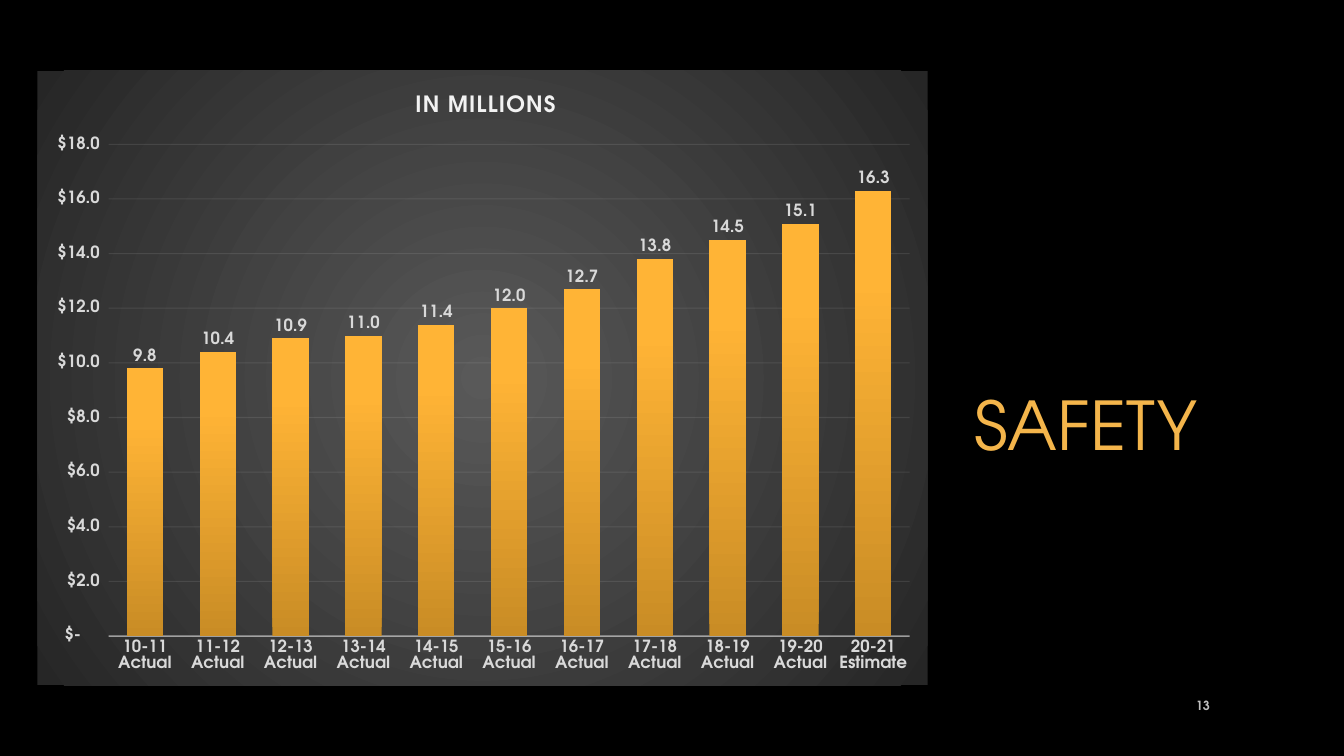
"""Build the Safety slide: a yearly column chart beside its title."""
import pptx
import pptx.chart.data
import pptx.dml.color
import pptx.enum.chart
import pptx.enum.text
import pptx.oxml
import pptx.oxml.ns
import pptx.util

Inches = pptx.util.Inches
FONT = "TeX Gyre Adventor"
COLORS = {
    "background": "000000", "title": "F4B54B", "number": "BFBFBF",
    "label": "D9D9D9", "heading": "F2F2F2", "line": "F2F2F2", "text": "FFFFFF",
}
PANEL_STOPS = [(0, "595959"), (100, "262626")]
BAR_STOPS = [(0, "C98C25"), (80, "FFB436"), (100, "FFB538")]
PANEL_SHADE = ('<a:path path="circle"><a:fillToRect l="50000" t="50000" '
               'r="50000" b="50000"/></a:path>')
BAR_SHADE = '<a:lin ang="16200000" scaled="0"/>'

TITLE = "SAFETY"
PAGE_NUMBER = "13"
CHART_TITLE = "IN MILLIONS"
AXIS_FORMAT = '_("$"* #,##0.0_);_("$"* \\(#,##0.0\\);_("$"* "-"??_);_(@_)'
FIRST_YEAR = 10
MILLIONS = [9.8, 10.4, 10.9, 11, 11.4, 12, 12.7, 13.8, 14.5, 15.1, 16.3]

TITLE_AREA = (8.93, 0.67, 3.68, 3.98)
NUMBER_AREA = (11.5, 6.8, 0.6, 0.4)
CHART_AREA = (0.37, 0.7, 8.83, 6.1)
PLOT_LAYOUT = {"x": 0.08, "y": 0.12, "w": 0.9, "h": 0.8}
HEADING_LAYOUT = {"x": 0.42, "y": 0.03}


def rgb(name):
    return pptx.dml.color.RGBColor.from_string(COLORS[name])


def set_all(target, **values):
    for name, value in values.items():
        setattr(target, name, value)


def set_font(font, size, color, bold=False):
    set_all(font, name=FONT, size=pptx.util.Pt(size), bold=bold)
    font.color.rgb = rgb(color)


def fill_text(box, text, size, color, align, anchor, bold=False):
    frame = box.text_frame
    set_all(frame, word_wrap=True, vertical_anchor=anchor)
    para = frame.paragraphs[0]
    para.alignment = align
    span = para.add_run()
    span.text = text
    set_font(span.font, size, color, bold)


def shape_properties(stops, shade):
    marks = "".join(f'<a:gs pos="{place * 1000}"><a:srgbClr val="{color}"/></a:gs>'
                    for place, color in stops)
    return pptx.oxml.parse_xml(
        f'<c:spPr {pptx.oxml.ns.nsdecls("c", "a")}><a:gradFill rotWithShape="1">'
        f'<a:gsLst>{marks}</a:gsLst>{shade}</a:gradFill>'
        '<a:ln><a:noFill/></a:ln></c:spPr>')


def place_part(part, index, layout, target=""):
    for old in part.xpath("c:layout"):
        part.remove(old)
    modes = "".join(f'<c:{key}Mode val="edge"/>' for key in "xy")
    sizes = "".join(f'<c:{key} val="{value}"/>' for key, value in layout.items())
    part.insert(index, pptx.oxml.parse_xml(
        f'<c:layout {pptx.oxml.ns.nsdecls("c")}><c:manualLayout>'
        f'{target}{modes}{sizes}</c:manualLayout></c:layout>'))


def set_line(line, width, parent, query, percent):
    line.width = pptx.util.Pt(width)
    line.color.rgb = rgb("line")
    for color in parent.xpath(query):
        color.append(pptx.oxml.parse_xml(
            f'<a:alpha {pptx.oxml.ns.nsdecls("a")} val="{percent * 1000}"/>'))


def style_axes(chart):
    years, dollars = chart.category_axis, chart.value_axis
    none = pptx.enum.chart.XL_TICK_MARK.NONE
    for axis in (years, dollars):
        set_all(axis, major_tick_mark=none, minor_tick_mark=none)
        set_font(axis.tick_labels.font, 12, "label", True)
    set_line(years.format.line, 1, years._element, "c:spPr//a:srgbClr", 54)
    set_all(dollars, minimum_scale=0, maximum_scale=18, major_unit=2,
            has_major_gridlines=True)
    set_all(dollars.tick_labels, number_format=AXIS_FORMAT,
            number_format_is_linked=False)
    dollars.format.line.fill.background()
    set_line(dollars.major_gridlines.format.line, 0.75, dollars._element,
             "c:majorGridlines//a:srgbClr", 10)


def style_bars(chart):
    plot = chart.plots[0]
    set_all(plot, gap_width=100, overlap=-24, vary_by_categories=False,
            has_data_labels=True)
    set_all(plot.data_labels, show_value=True, number_format="#,##0.0",
            number_format_is_linked=False,
            position=pptx.enum.chart.XL_LABEL_POSITION.OUTSIDE_END)
    set_font(plot.data_labels.font, 12, "label", True)
    bars = plot.series[0]
    bars.format.fill.background()
    old = bars._element.xpath("c:spPr")[0]
    old.getparent().replace(old, shape_properties(BAR_STOPS, BAR_SHADE))


def add_safety_chart(page):
    data = pptx.chart.data.CategoryChartData(number_format="#,##0.0")
    last = len(MILLIONS) - 1
    data.categories = [
        f"{FIRST_YEAR + i}-{FIRST_YEAR + i + 1} {'Estimate' if i == last else 'Actual'}"
        for i in range(len(MILLIONS))]
    data.add_series("Series 1", MILLIONS)
    chart = page.shapes.add_chart(
        pptx.enum.chart.XL_CHART_TYPE.COLUMN_CLUSTERED,
        *map(Inches, CHART_AREA), data).chart
    set_all(chart, has_legend=False, has_title=True)
    set_font(chart.font, 10, "text")
    span = chart.chart_title.text_frame.paragraphs[0].add_run()
    span.text = CHART_TITLE
    set_font(span.font, 16, "heading", True)
    span._r.get_or_add_rPr().set("spc", "100")
    style_axes(chart)
    style_bars(chart)
    root = chart._chartSpace
    root.xpath("c:chart")[0].addnext(shape_properties(PANEL_STOPS, PANEL_SHADE))
    place_part(root.xpath("c:chart/c:title")[0], 1, HEADING_LAYOUT)
    place_part(root.xpath("c:chart/c:plotArea")[0], 0, PLOT_LAYOUT,
               '<c:layoutTarget val="inner"/>')


def main():
    deck = pptx.Presentation()
    set_all(deck, slide_width=Inches(13.33), slide_height=Inches(7.5))
    page = deck.slides.add_slide(deck.slide_layouts[5])
    page.background.fill.solid()
    page.background.fill.fore_color.rgb = rgb("background")

    align, anchor = pptx.enum.text.PP_ALIGN, pptx.enum.text.MSO_ANCHOR
    title = page.shapes.title
    set_all(title, **dict(zip(("left", "top", "width", "height"),
                              map(Inches, TITLE_AREA))))
    fill_text(title, TITLE, 48, "title", align.CENTER, anchor.BOTTOM)
    number = page.shapes.add_textbox(*map(Inches, NUMBER_AREA))
    fill_text(number, PAGE_NUMBER, 9, "number", align.RIGHT, anchor.MIDDLE, True)
    add_safety_chart(page)
    deck.save("out.pptx")


if __name__ == "__main__":
    main()
